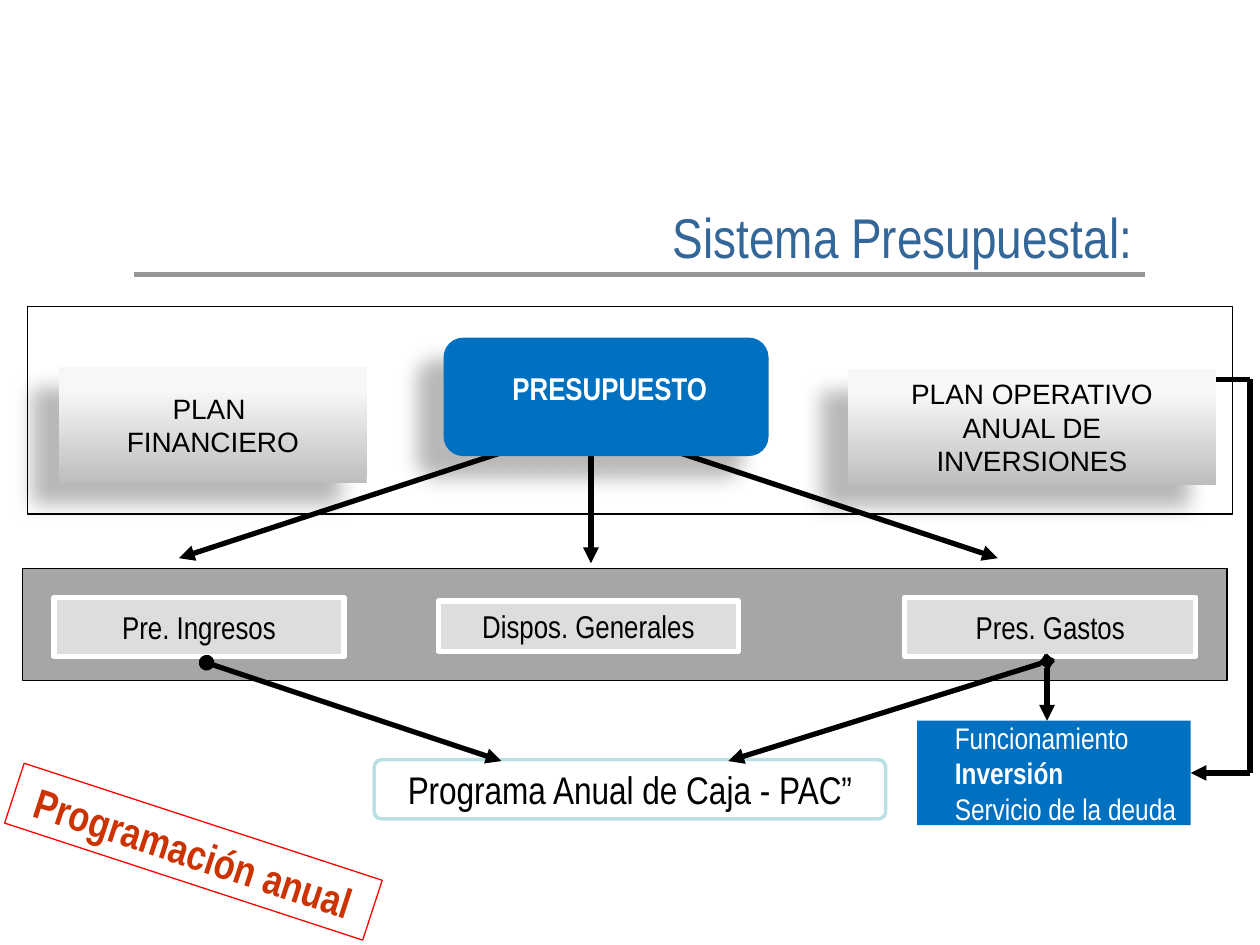
from lxml.etree import SubElement
from pptx import Presentation
from pptx.dml.color import RGBColor
from pptx.enum.shapes import MSO_CONNECTOR, MSO_SHAPE
from pptx.enum.text import MSO_ANCHOR, PP_ALIGN
from pptx.oxml.ns import qn
from pptx.util import Inches, Pt

THEME = {
    "black": "000000", "white": "FFFFFF", "blue": "0070C0", "band": "A6A6A6",
    "label": "DDDDDD", "pale": "BBE0E3", "rule": "969696", "title": "336699",
    "red": "FF0000", "rust": "CC3300",
    "plan_stops": [(0, "BEBEBE"), (80, "F7F7F7"), (100, "F8F8F8")],
    "narrow": "Arial Narrow", "sans": "Arial",
    "title_size": 32, "tag_size": 24, "cash_size": 22, "label_size": 18,
    "spending_size": 17, "plan_size": 16, "thin": 0.75, "frame": 2, "thick": 3,
}

TITLE = "Sistema Presupuestal:"
PLANS = [
    (["PLAN ", "FINANCIERO"], (0.47, 2.91, 2.44, 0.92)),
    (["PLAN OPERATIVO", "ANUAL DE", "INVERSIONES"], (6.73, 2.93, 2.92, 0.92)),
]
BUDGET_PARTS = [
    ("Pre. Ingresos", (0.43, 4.74, 2.3, 0.47)),
    ("Dispos. Generales", (3.48, 4.77, 2.38, 0.4)),
    ("Pres. Gastos", (7.18, 4.74, 2.31, 0.47)),
]
CASH_PROGRAM = "Programa Anual de Caja - PAC”"
SPENDING = ["Funcionamiento", "Inversión", "Servicio de la deuda"]
BUDGET = "PRESUPUESTO"
TAG = "Programación anual"
FLOWS = [
    ((5.23, 3.54), (7.92, 4.43), "diamond"),
    ((4.14, 3.54), (1.42, 4.43), "diamond"),
    ((4.69, 3.54), (4.69, 4.47), "diamond"),
    ((1.64, 5.26), (3.98, 6.04), "oval"),
    ((8.31, 5.25), (5.78, 6.04), "diamond"),
    ((8.31, 5.25), (8.31, 5.72), "diamond"),
]
RETURN_X, RETURN_TOP = 9.92, 3.01
SPENDING_BOX = (7.28, 5.72, 2.17, 0.83)
RETURN_BOTTOM = SPENDING_BOX[1] + SPENDING_BOX[3] / 2

presentation = Presentation()
presentation.slide_width, presentation.slide_height = Inches(10), Inches(7.5)
slide = presentation.slides.add_slide(presentation.slide_layouts[5])


def color(name):
    return RGBColor.from_string(THEME[name])


def write(shape, lines, size, ink, font="narrow", align=PP_ALIGN.CENTER,
          wrap=False, bold=(), indent=0):
    frame = shape.text_frame
    layout = {"word_wrap": wrap, "vertical_anchor": MSO_ANCHOR.MIDDLE,
              "margin_left": Inches(0.1), "margin_right": Inches(0.1),
              "margin_top": Inches(0.05), "margin_bottom": Inches(0.05)}
    for key, value in layout.items():
        setattr(frame, key, value)
    for index, line in enumerate(lines):
        paragraph = frame.paragraphs[0] if index == 0 else frame.add_paragraph()
        paragraph.alignment = align
        if indent:
            paragraph._p.get_or_add_pPr().set("marL", str(Inches(indent)))
        run = paragraph.add_run()
        run.text = line
        style = {"name": THEME[font], "size": Pt(THEME[size]), "bold": line in bold}
        for key, value in style.items():
            setattr(run.font, key, value)
        run.font.color.rgb = color(ink)


def add_box(place, fill=None, line=None, width="thin", kind=MSO_SHAPE.RECTANGLE):
    box = slide.shapes.add_shape(kind, *map(Inches, place))
    box.shadow.inherit = False
    if fill:
        box.fill.solid()
        box.fill.fore_color.rgb = color(fill)
    else:
        box.fill.background()
    if line:
        box.line.color.rgb = color(line)
        box.line.width = Pt(THEME[width])
    else:
        box.line.fill.background()
    return box


def add_color(parent, value):
    return SubElement(parent, qn("a:srgbClr"), val=value)


def cast_shadow(box):
    effects = box._element.spPr.find(qn("a:effectLst"))
    shadow = SubElement(effects, qn("a:outerShdw"), blurRad=str(Pt(11.8)),
                        dist=str(Pt(19.7)), dir=str(141 * 60000),
                        algn="ctr", rotWithShape="0")
    SubElement(add_color(shadow, THEME["black"]), qn("a:alpha"), val="28000")


def shade(box):
    box.fill.gradient()
    gradient = box._element.spPr.find(qn("a:gradFill"))
    for child in list(gradient):
        gradient.remove(child)
    stops = SubElement(gradient, qn("a:gsLst"))
    for position, value in THEME["plan_stops"]:
        add_color(SubElement(stops, qn("a:gs"), pos=str(position * 1000)), value)
    SubElement(gradient, qn("a:lin"), ang=str(270 * 60000), scaled="1")


def add_line(start, end, head=None, tail=None, ink="black"):
    line = slide.shapes.add_connector(MSO_CONNECTOR.STRAIGHT,
                                      *map(Inches, (*start, *end)))
    line.line.color.rgb = color(ink)
    line.line.width = Pt(THEME["thick"])
    for side, kind in (("a:headEnd", head), ("a:tailEnd", tail)):
        if kind:
            SubElement(line.line._get_or_add_ln(), qn(side), type=kind)
    SubElement(line._element.spPr, qn("a:effectLst"))
    return line


title = slide.shapes.title
title_place = {"left": 1.45, "top": 1.55, "width": 7.64, "height": 0.64}
for key, value in title_place.items():
    setattr(title, key, Inches(value))
write(title, [TITLE], "title_size", "title", align=PP_ALIGN.RIGHT, wrap=True)

add_line((RETURN_X, RETURN_TOP), (9.58, RETURN_TOP))
add_box((0.22, 2.43, 9.56, 1.65), line="black")
for lines, place in PLANS:
    plan = add_box(place)
    shade(plan)
    cast_shadow(plan)
    write(plan, lines, "plan_size", "black", font="sans")

add_box((0.18, 4.51, 9.56, 0.89), "band", "black")
for label, place in BUDGET_PARTS:
    part = add_box(place, "label", "white", "thick")
    write(part, [label], "label_size", "black")

cash = add_box((2.97, 6.03, 4.06, 0.47), "white", "pale", "frame",
               MSO_SHAPE.ROUNDED_RECTANGLE)
cash.adjustments[0] = 0.125
write(cash, [CASH_PROGRAM], "cash_size", "black")

spending = add_box(SPENDING_BOX, "blue")
write(spending, SPENDING, "spending_size", "white", align=PP_ALIGN.LEFT,
      bold=SPENDING[1:2], indent=0.2)

for start, end, head in FLOWS:
    add_line(start, end, head, "triangle")
investment = add_line((RETURN_X, RETURN_BOTTOM), (9.45, RETURN_BOTTOM), tail="triangle")
investment.end_connect(spending, 3)
add_line((RETURN_X, RETURN_TOP), (RETURN_X, RETURN_BOTTOM))

tag = add_box((0.04, 6.51, 2.99, 0.5), line="red")
tag.rotation = 18.1
write(tag, [TAG], "tag_size", "rust", wrap=True, bold=[TAG])

budget = add_box((3.52, 2.68, 2.58, 0.94), "blue", kind=MSO_SHAPE.ROUNDED_RECTANGLE)
cast_shadow(budget)
budget_label = slide.shapes.add_textbox(*map(Inches, (3.67, 2.88, 2.34, 0.4)))
write(budget_label, [BUDGET], "label_size", "white", wrap=True, bold=[BUDGET])

add_line((1.06, 2.18), (9.09, 2.18), ink="rule")

presentation.save("out.pptx")
